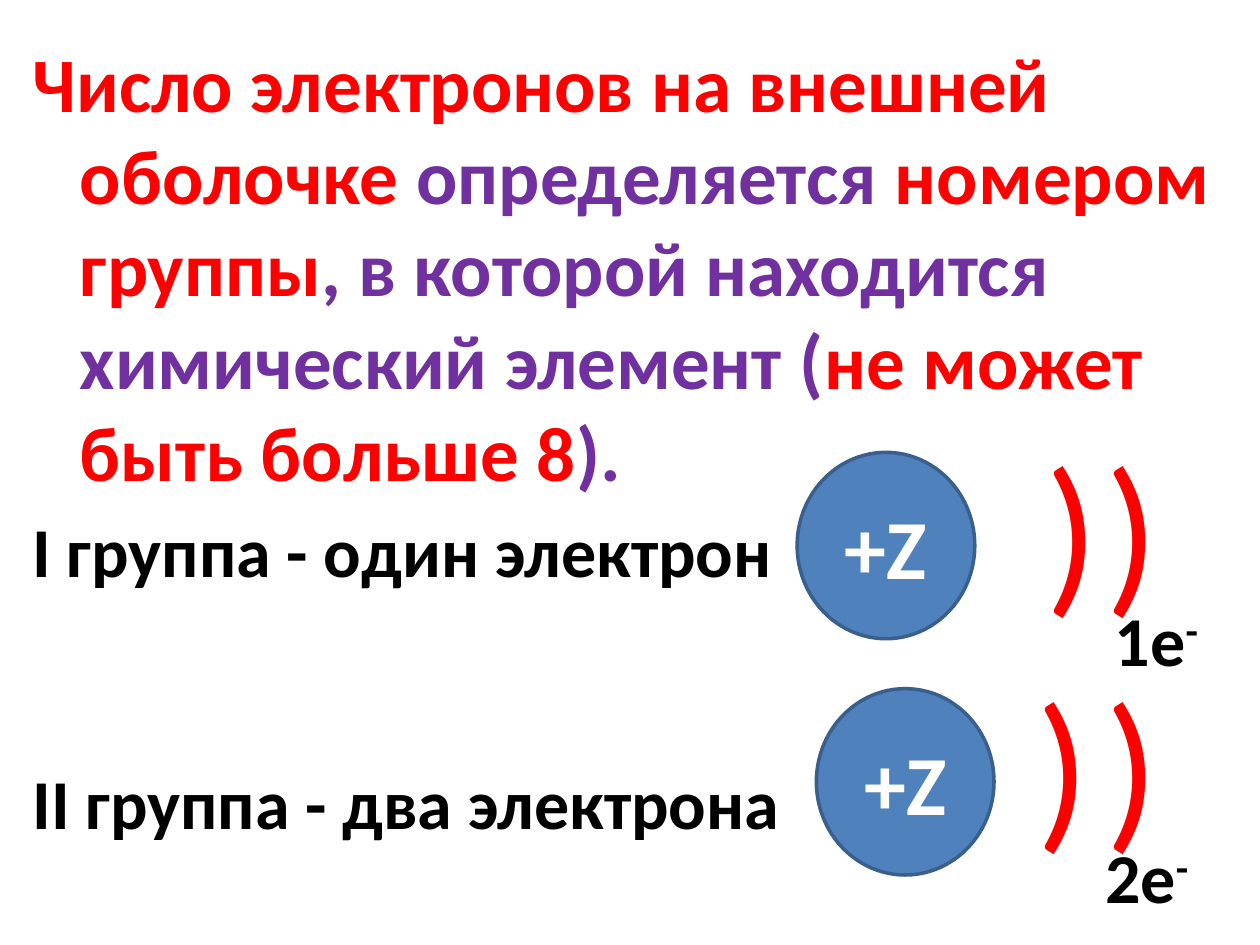
from pptx import Presentation
from pptx.dml.color import RGBColor
from pptx.enum.shapes import MSO_SHAPE as Shape
from pptx.enum.text import MSO_ANCHOR as Anchor, MSO_AUTO_SIZE as AutoSize, PP_ALIGN as Align
from pptx.util import Pt

RED, PURPLE, BLACK, WHITE = "FF0000", "7030A0", "000000", "FFFFFF"
NUCLEUS_FILL, NUCLEUS_LINE = "4F81BD", "3A5F8C"

RULE = [
    ("Число электронов на внешней оболочке", RED),
    (" определяется ", PURPLE),
    ("номером группы", RED),
    (", в которой находится химический элемент (", PURPLE),
    ("не может быть больше 8", RED),
    (").", PURPLE),
]
GROUPS = ["I группа - один электрон", "II группа - два электрона"]


def rgb(value):
    return RGBColor.from_string(value)


def add_span(para, text, size, color=BLACK, bold=True, superscript=False):
    span = para.add_run()
    span.text = text
    font = span.font
    font.name, font.size, font.bold = "Calibri", Pt(size), bold
    font.color.rgb = rgb(color)
    if superscript:
        span._r.get_or_add_rPr().set("baseline", "30000")


def add_box(page, left, top, width, height, wrap=False):
    """Add a text box and return its text frame."""
    box = page.shapes.add_textbox(Pt(left), Pt(top), Pt(width), Pt(height))
    frame = box.text_frame
    frame.word_wrap = wrap
    frame.auto_size = AutoSize.NONE if wrap else AutoSize.SHAPE_TO_FIT_TEXT
    return frame


def add_rule(page):
    para = add_box(page, 11.5, 16.5, 692, 276, wrap=True).paragraphs[0]
    properties = para._p.get_or_add_pPr()
    properties.set("marL", str(Pt(27)))
    properties.set("indent", str(Pt(-27)))
    for text, color in RULE:
        add_span(para, text, 44, color)


def add_groups(page):
    frame = add_box(page, 11.5, 286.5, 445.5, 250)
    for index, text in enumerate(GROUPS):
        para = frame.add_paragraph() if index else frame.paragraphs[0]
        if index:
            para.space_before = Pt(96)
        add_span(para, text, 40)


def add_nucleus(page, left, top):
    nucleus = page.shapes.add_shape(Shape.OVAL, Pt(left), Pt(top), Pt(101.5), Pt(106.5))
    nucleus.shadow.inherit = False
    nucleus.fill.solid()
    nucleus.fill.fore_color.rgb = rgb(NUCLEUS_FILL)
    nucleus.line.color.rgb = rgb(NUCLEUS_LINE)
    nucleus.line.width = Pt(2)
    frame = nucleus.text_frame
    frame.vertical_anchor = Anchor.MIDDLE
    para = frame.paragraphs[0]
    para.alignment = Align.CENTER
    add_span(para, "+Z", 48, WHITE)


def add_atom(page, top, nucleus_left, shell_lefts, electrons, electrons_left):
    """Draw a nucleus, its electron shells and the outer electron count."""
    add_nucleus(page, nucleus_left, top)
    for left in shell_lefts:
        para = add_box(page, left, top - 22.5, 45, 128).paragraphs[0]
        add_span(para, ")", 100, RED, bold=False)
    para = add_box(page, electrons_left, top + 79, 63, 55.5).paragraphs[0]
    add_span(para, f"{electrons}e", 40)
    add_span(para, "-", 40, superscript=True)


def main():
    deck = Presentation()
    deck.slide_width, deck.slide_height = Pt(720), Pt(540)
    page = deck.slides.add_slide(deck.slide_layouts[6])
    add_rule(page)
    add_groups(page)
    add_atom(page, 258.5, 455.5, (590.5, 624.5), 1, 630)
    add_atom(page, 393.5, 466.5, (585.5, 624.5), 2, 624.5)
    deck.save("out.pptx")


if __name__ == "__main__":
    main()
